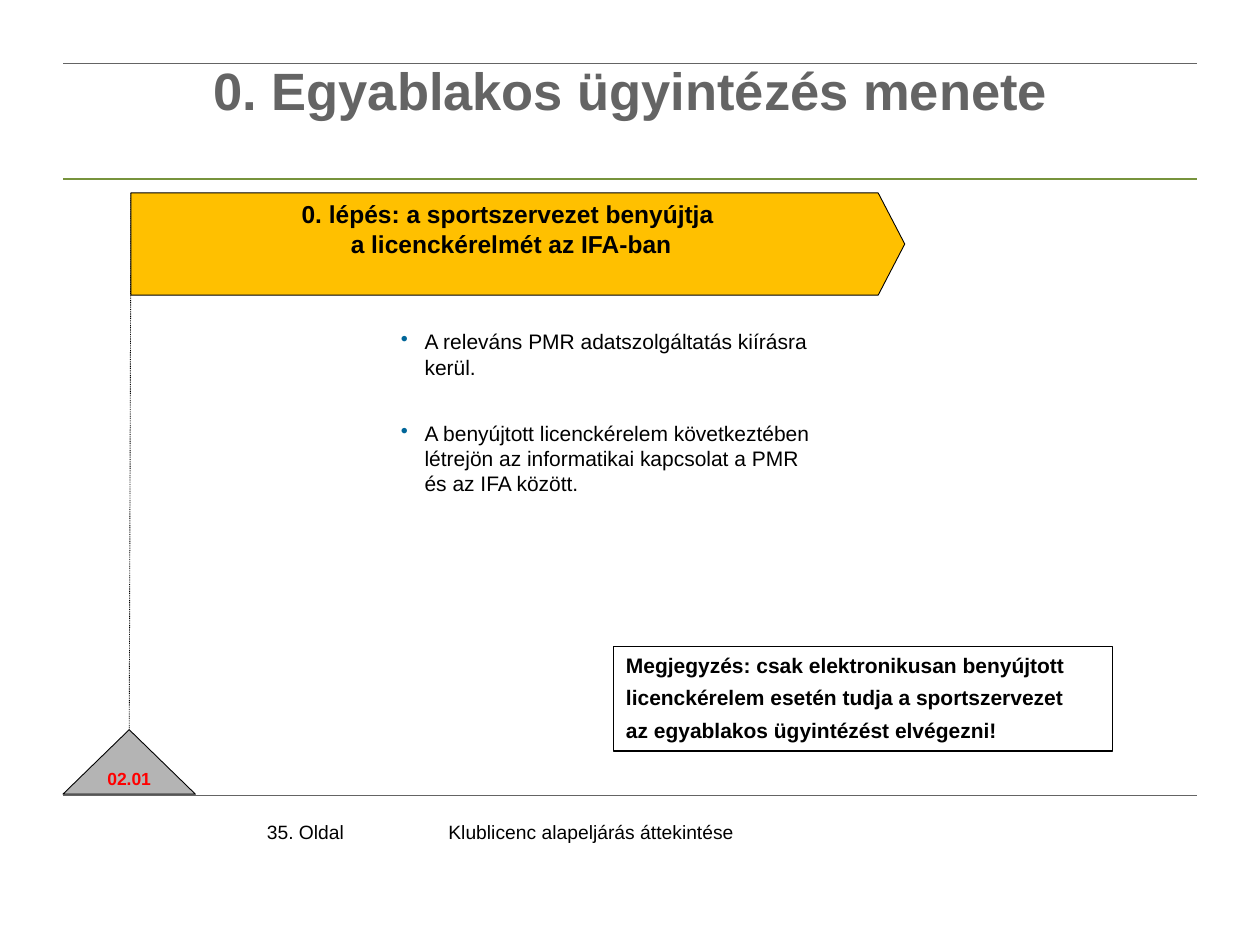
from dataclasses import dataclass

from lxml.etree import SubElement
from pptx import Presentation
from pptx.dml.color import RGBColor
from pptx.enum.dml import MSO_LINE
from pptx.enum.shapes import MSO_CONNECTOR, MSO_SHAPE
from pptx.enum.text import MSO_ANCHOR, PP_ALIGN
from pptx.oxml.ns import qn
from pptx.util import Cm, Pt


@dataclass(frozen=True)
class Theme:
    font: str = "Arial"
    black: str = "000000"
    grey: str = "646464"
    green: str = "77933C"
    amber: str = "FFC000"
    silver: str = "B4B4B4"
    red: str = "FF0000"
    bullet: str = "006699"
    title_size: int = 30
    step_size: int = 14
    body_size: int = 12
    footer_size: int = 11
    date_size: int = 10


class SlideBuilder:
    def __init__(self, slide, theme):
        self.slide = slide
        self.theme = theme

    def add_lines(self, shape, lines, size, color=None, bold=False, align=PP_ALIGN.LEFT,
                  insets=(0, 0, 0, 0), anchor=MSO_ANCHOR.TOP, wrap=True,
                  spacing=None, gap=0, bulleted=False):
        frame = shape.text_frame
        frame.word_wrap = wrap
        frame.vertical_anchor = anchor
        (frame.margin_left, frame.margin_top,
         frame.margin_right, frame.margin_bottom) = map(Cm, insets)
        for index, line in enumerate(lines):
            paragraph = frame.add_paragraph() if index else frame.paragraphs[0]
            if bulleted:
                self.add_bullet(paragraph)
            paragraph.alignment = align
            if spacing:
                paragraph.line_spacing = spacing
            if index and gap:
                paragraph.space_before = Pt(gap)
            run = paragraph.add_run()
            run.text = line
            run.font.name = self.theme.font
            run.font.size = Pt(size)
            run.font.bold = bold
            run.font.color.rgb = RGBColor.from_string(color or self.theme.black)

    def add_bullet(self, paragraph):
        properties = paragraph._p.get_or_add_pPr()
        properties.set("marL", str(Cm(0.48)))
        properties.set("indent", str(Cm(-0.48)))
        bullet_color = SubElement(properties, qn("a:buClr"))
        SubElement(bullet_color, qn("a:srgbClr"), val=self.theme.bullet)
        SubElement(properties, qn("a:buChar"), char="•")

    def text(self, box, lines, size, **style):
        self.add_lines(self.slide.shapes.add_textbox(*map(Cm, box)), lines, size, **style)

    def shape(self, kind, box, lines, size, fill=None, line_width=0.5,
              adjustment=None, **style):
        shape = self.slide.shapes.add_shape(kind, *map(Cm, box))
        shape.shadow.inherit = False
        if adjustment is not None:
            shape.adjustments[0] = adjustment
        if fill:
            shape.fill.solid()
            shape.fill.fore_color.rgb = RGBColor.from_string(fill)
        else:
            shape.fill.background()
        shape.line.color.rgb = RGBColor.from_string(self.theme.black)
        shape.line.width = Pt(line_width)
        self.add_lines(shape, lines, size, **style)
        return shape

    def line(self, start, end, color, width, dash=None):
        line = self.slide.shapes.add_connector(
            MSO_CONNECTOR.STRAIGHT, *map(Cm, (*start, *end)))
        line.line.color.rgb = RGBColor.from_string(color)
        line.line.width = Pt(width)
        if dash:
            line.line.dash_style = dash
        SubElement(line._element.spPr, qn("a:effectLst"))
        return line


def main():
    presentation = Presentation()
    presentation.slide_width = Cm(25.4)
    presentation.slide_height = Cm(19.05)
    theme = Theme()
    builder = SlideBuilder(
        presentation.slides.add_slide(presentation.slide_layouts[6]), theme)
    left, right = 1.27, 24.13
    padding = (0.13,) * 4

    # Footer
    for x, width, footer in ((9.04, 8.71, "Klublicenc alapeljárás áttekintése"),
                             (5.38, 1.85, "35. Oldal")):
        builder.text((x, 16.54, width, 0.56), [footer], theme.footer_size, wrap=False)

    # Horizontal rules
    for y, color, width in ((3.61, theme.green, 1), (16.03, theme.grey, 0.25),
                            (1.27, theme.grey, 0.5)):
        builder.line((left, y), (right, y), color, width)

    # Title
    builder.text((left, 1.27, 22.89, 2.39), ["0. Egyablakos ügyintézés menete"],
                 theme.title_size, color=theme.grey, bold=True,
                 align=PP_ALIGN.CENTER, insets=(0, 0.1, 0, 0), spacing=0.85)

    # Date marker and its link to the step
    step_left, step_top = 2.64, 3.89
    date_marker = builder.shape(
        MSO_SHAPE.ISOSCELES_TRIANGLE, (left, 14.71, 2.67, 1.3), ["02.01"],
        theme.date_size, fill=theme.silver, color=theme.red, bold=True,
        align=PP_ALIGN.CENTER, insets=padding, anchor=MSO_ANCHOR.MIDDLE, wrap=False)
    date_link = builder.line((step_left, step_top), (2.6, 14.71), theme.black, 0.5,
                             dash=MSO_LINE.ROUND_DOT)
    date_link.end_connect(date_marker, 0)

    # Step
    builder.shape(
        MSO_SHAPE.PENTAGON, (step_left, step_top, 15.6, 2.06),
        ["0. lépés: a sportszervezet benyújtja ", "a licenckérelmét az IFA-ban"],
        theme.step_size, fill=theme.amber, adjustment=0.26, bold=True,
        align=PP_ALIGN.CENTER, insets=padding, wrap=False)

    # Details of the step
    details = (
        (6.63, "A releváns PMR adatszolgáltatás kiírásra kerül."),
        (8.48, "A benyújtott licenckérelem következtében létrejön az informatikai "
               "kapcsolat a PMR és az IFA között."),
    )
    for y, detail in details:
        builder.text((8.08, y, 8.26, 3.71), [detail], theme.body_size, bulleted=True)

    # Note
    builder.shape(
        MSO_SHAPE.RECTANGLE, (12.37, 13.03, 10.06, 2.11),
        ["Megjegyzés: csak elektronikusan benyújtott",
         "licenckérelem esetén tudja a sportszervezet",
         "az egyablakos ügyintézést elvégezni!"],
        theme.body_size, line_width=0.75, bold=True,
        insets=(0.25, 0.13, 0.25, 0.13), gap=4)

    presentation.save("out.pptx")


if __name__ == "__main__":
    main()
